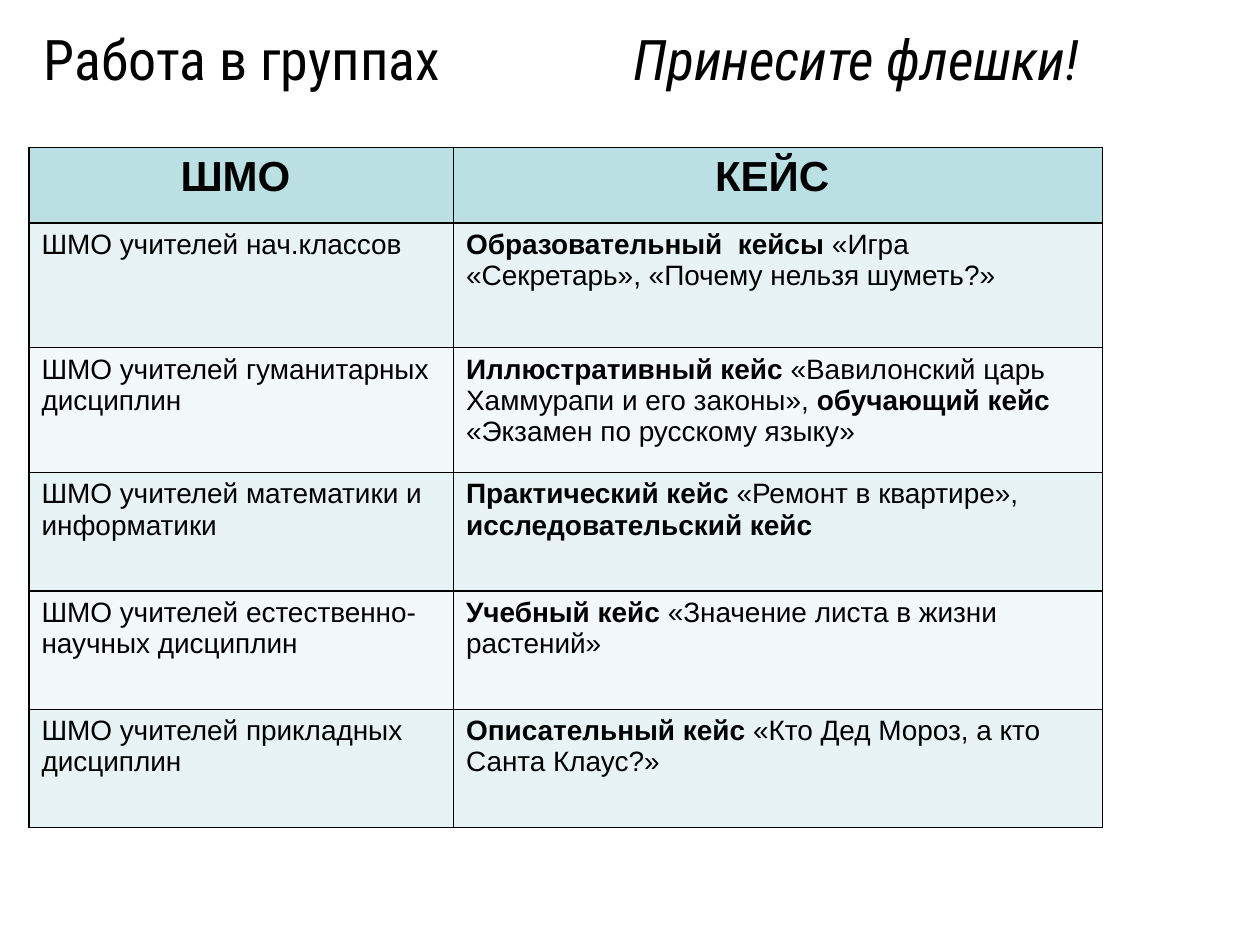
from lxml.etree import SubElement
from pptx import Presentation
from pptx.dml.color import RGBColor
from pptx.enum.text import MSO_ANCHOR, PP_ALIGN
from pptx.oxml.ns import qn
from pptx.util import Inches, Pt

BLACK = RGBColor(0x00, 0x00, 0x00)
HEADER_FILL = RGBColor(0xBB, 0xE0, 0xE3)
ODD_FILL = RGBColor(0xE7, 0xF3, 0xF4)
EVEN_FILL = RGBColor(0xF3, 0xF9, 0xFA)

HEADINGS = ("ШМО ", "КЕЙС ")
# Each group with its cases, given as (text, bold) runs
GROUP_CASES = [
    ("ШМО учителей нач.классов",
     [("Образовательный  кейсы ", True),
      ("«Игра «Секретарь», «Почему нельзя шуметь?»", False)]),
    ("ШМО учителей гуманитарных дисциплин",
     [("Иллюстративный кейс ", True),
      ("«Вавилонский царь Хаммурапи и его законы», ", False),
      ("обучающий кейс ", True),
      ("«Экзамен по русскому языку»", False)]),
    ("ШМО учителей математики и информатики",
     [("Практический кейс ", True),
      ("«Ремонт в квартире», ", False),
      ("исследовательский кейс", True)]),
    ("ШМО учителей естественно-научных дисциплин",
     [("Учебный кейс ", True),
      ("«Значение листа в жизни растений»", False)]),
    ("ШМО учителей прикладных дисциплин",
     [("Описательный кейс ", True),
      ("«Кто Дед Мороз, а кто Санта Клаус?»", False)]),
]
COLUMN_WIDTHS = (3.37, 5.15)
ROW_HEIGHTS = (0.6, 0.99, 0.99, 0.94, 0.94, 0.94)


def add_run(paragraph, text, font_name, size, bold=False, italic=False):
    run = paragraph.add_run()
    run.text = text
    font = run.font
    font.name, font.size = font_name, Pt(size)
    font.bold, font.italic = bold, italic
    font.color.rgb = BLACK


def add_title(slide, left, top, width, height):
    frame = slide.shapes.add_textbox(left, top, width, height).text_frame
    frame.word_wrap = True
    frame.vertical_anchor = MSO_ANCHOR.MIDDLE
    title = frame.paragraphs[0]
    # The tab stop sets the reminder apart from the title
    tabs = SubElement(title._p.get_or_add_pPr(), qn("a:tabLst"))
    SubElement(tabs, qn("a:tab"), pos=str(Inches(4.68)), algn="l")
    add_run(title, "Работа в группах\t", "Roboto Condensed", 32)
    add_run(title, "Принесите флешки!", "Roboto Condensed", 32, italic=True)


def add_borders(cell):
    properties = cell._tc.get_or_add_tcPr()
    for side in ("lnL", "lnR", "lnT", "lnB"):
        line = SubElement(properties, qn(f"a:{side}"), w=str(Pt(1)))
        fill = SubElement(line, qn("a:solidFill"))
        SubElement(fill, qn("a:srgbClr"), val=str(BLACK))


def fill_cell(cell, runs, size, color, align):
    add_borders(cell)
    cell.fill.solid()
    cell.fill.fore_color.rgb = color
    paragraph = cell.text_frame.paragraphs[0]
    paragraph.alignment = align
    for text, bold in runs:
        add_run(paragraph, text, "Arial", size, bold)


def add_case_table(slide, left, top, width, height):
    table = slide.shapes.add_table(
        len(ROW_HEIGHTS), len(COLUMN_WIDTHS), left, top, width, height).table
    for column, column_width in zip(table.columns, COLUMN_WIDTHS):
        column.width = Inches(column_width)
    for row, row_height in zip(table.rows, ROW_HEIGHTS):
        row.height = Inches(row_height)

    # Header row
    for cell, heading in zip(table.rows[0].cells, HEADINGS):
        fill_cell(cell, [(heading, True)], 24, HEADER_FILL, PP_ALIGN.CENTER)

    # Banded rows of groups and cases
    for number, (group, cases) in enumerate(GROUP_CASES, start=1):
        color = ODD_FILL if number % 2 else EVEN_FILL
        for column, runs in enumerate(([(group, False)], cases)):
            fill_cell(table.cell(number, column), runs, 16, color, PP_ALIGN.LEFT)


def main():
    prs = Presentation()
    prs.slide_width, prs.slide_height = Inches(10), Inches(7.5)
    slide = prs.slides.add_slide(prs.slide_layouts[6])
    add_title(slide, Inches(0.25), Inches(0.17), Inches(9.75), Inches(0.58))
    add_case_table(slide, Inches(0.23), Inches(1.17),
                   Inches(sum(COLUMN_WIDTHS)), Inches(sum(ROW_HEIGHTS)))
    prs.save("out.pptx")


if __name__ == "__main__":
    main()
